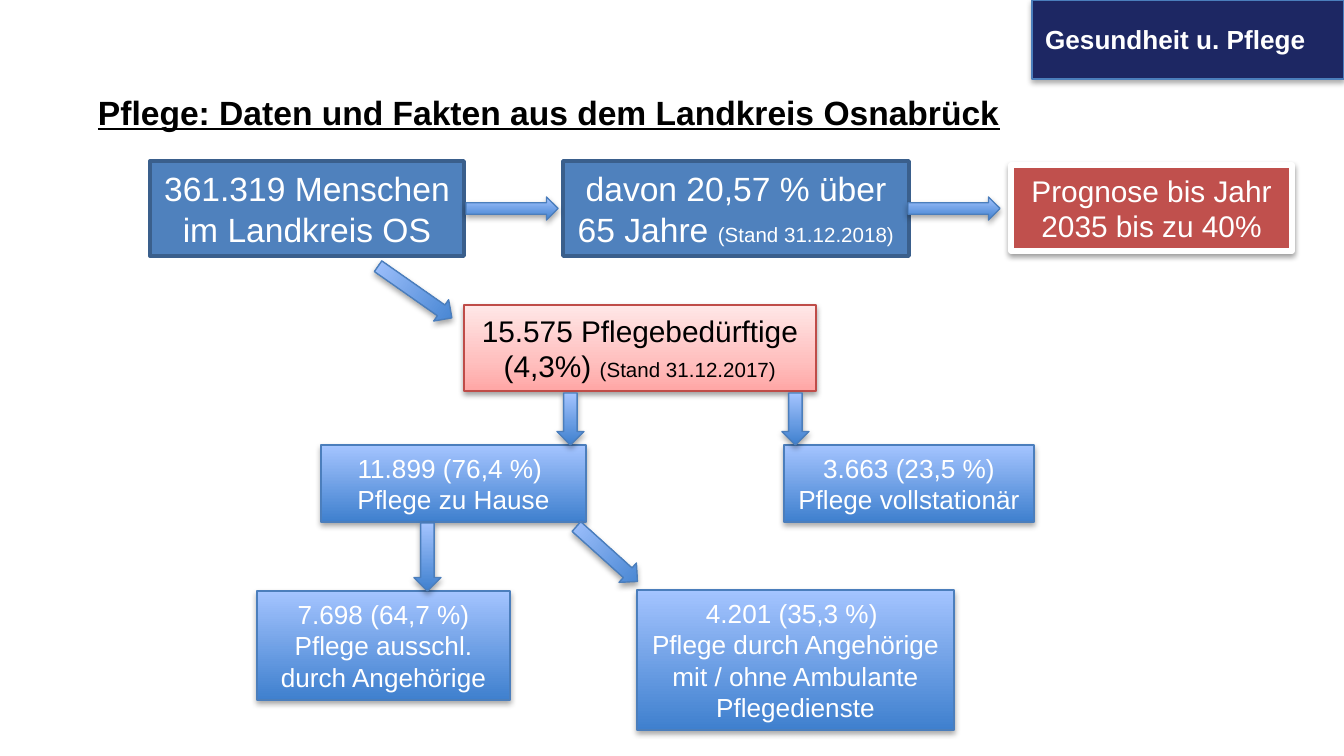
import copy
from dataclasses import dataclass

import lxml.etree
import pptx
import pptx.dml.color
import pptx.enum.shapes
import pptx.enum.text
import pptx.oxml
import pptx.oxml.ns
import pptx.util

SCALE = 914400 / 134.4
KIND = pptx.enum.shapes.MSO_SHAPE
ALIGN = pptx.enum.text.PP_ALIGN


@dataclass(frozen=True)
class Theme:
    font: str = "Arial"
    white: str = "FFFFFF"
    black: str = "000000"
    navy: str = "1D2763"
    steel: str = "4F81BD"
    rim: str = "3A5F8C"
    edge: str = "4B7EBC"
    red: str = "C0504D"
    rose: str = "BF4C48"
    blues: tuple = ((0, "3F80CE"), (100, "A4C4FF"))
    pinks: tuple = ((0, "FFA6A5"), (35, "FFC0BF"), (100, "FFE7E7"))
    large: int = 18
    mid: int = 16
    base: int = 14
    small: int = 11


T = Theme()


def px(num):
    return pptx.util.Emu(round(num * SCALE))


def rgb(code):
    return pptx.dml.color.RGBColor.from_string(code)


def shade(shape, alpha):
    """Cast a soft shadow straight down, with alpha in percent."""
    shape.shadow.inherit = False
    effects = shape._element.spPr.find(pptx.oxml.ns.qn("a:effectLst"))
    effects.append(pptx.oxml.parse_xml(
        f'<a:outerShdw {pptx.oxml.ns.nsdecls("a")} blurRad="40000" '
        'dist="23000" dir="5400000" rotWithShape="0"><a:srgbClr val="000000">'
        f'<a:alpha val="{alpha * 1000}"/></a:srgbClr></a:outerShdw>'))


def paint(fill, colour):
    """Fill with one colour, or with (percent, colour) stops from the bottom up."""
    if isinstance(colour, str):
        fill.solid()
        fill.fore_color.rgb = rgb(colour)
        return
    fill.gradient()
    fill.gradient_angle = 90
    first = fill.gradient_stops[0]._gs
    for _ in colour[2:]:
        first.addnext(copy.deepcopy(first))
    for stop, (place, code) in zip(fill.gradient_stops, colour):
        stop.position = place / 100
        stop.color.rgb = rgb(code)


def draw(slide, kind, spot, fill, edge, width=0.75, alpha=35):
    shape = slide.shapes.add_shape(kind, *map(px, spot))
    paint(shape.fill, fill)
    shape.line.color.rgb = rgb(edge)
    shape.line.width = pptx.util.Pt(width)
    if alpha:
        shade(shape, alpha)
    else:
        shape.shadow.inherit = False
    return shape


def write(shape, lines, size, colour, align=ALIGN.CENTER, bold=False, under=False):
    """Write paragraphs of runs; a run is a text, a (text, size) or a line break."""
    frame = shape.text_frame
    frame.word_wrap = True
    frame.margin_left = frame.margin_right = px(13 if align == ALIGN.LEFT else 10)
    for i, line in enumerate(lines):
        para = frame.add_paragraph() if i else frame.paragraphs[0]
        para.alignment = align
        for part in line:
            if part == "\n":
                para.add_line_break()
                continue
            text, points = (part, size) if isinstance(part, str) else part
            run = para.add_run()
            run.text = text
            run.font.name = T.font
            run.font.size = pptx.util.Pt(points)
            run.font.color.rgb = rgb(colour)
            run.font.bold = bold
            run.font.underline = under


def label(slide, spot, text, size, colour, under=False):
    box = slide.shapes.add_textbox(*map(px, spot))
    write(box, [[text]], size, colour, ALIGN.LEFT, True, under)


def card(slide, spot, lines, fill=T.blues, edge=T.edge, size=T.base,
         colour=T.white, width=0.75, alpha=35):
    shape = draw(slide, KIND.RECTANGLE, spot, fill, edge, width, alpha)
    shape.text_frame.vertical_anchor = pptx.enum.text.MSO_ANCHOR.MIDDLE
    write(shape, lines, size, colour)


def arrow(slide, kind, spot, turn=0):
    draw(slide, kind, spot, T.blues, T.edge).rotation = turn


def main():
    deck = pptx.Presentation()
    deck.slide_width, deck.slide_height = px(1344), px(756)
    slide = deck.slides.add_slide(deck.slide_layouts[6])

    draw(slide, KIND.RECTANGLE, (1032, 0, 312, 79), T.navy, T.edge)
    label(slide, (1032, 17, 297, 46), "Gesundheit u. Pflege", T.base, T.white)
    label(slide, (85, 85, 949, 54),
          "Pflege: Daten und Fakten aus dem Landkreis Osnabrück",
          T.large, T.black, True)

    steel = dict(fill=T.steel, edge=T.rim, size=T.large, width=2, alpha=0)
    card(slide, (150, 161, 314, 95), [["361.319 Menschen im Landkreis OS"]], **steel)
    card(slide, (563, 161, 346, 95),
         [["davon 20,57 % über 65 Jahre ", ("(Stand 31.12.2018)", T.small)]], **steel)

    card(slide, (321, 445, 265, 77), [["11.899 (76,4 %) "], ["Pflege zu Hause"]])
    card(slide, (784, 445, 250, 77), [["3.663 (23,5 %)"], ["Pflege vollstationär"]])
    card(slide, (257, 591, 253, 109),
         [["7.698 (64,7 %) Pflege ausschl. durch Angehörige"]])
    card(slide, (637, 590, 317, 140),
         [["4.201 (35,3 %) ", "\n",
           "Pflege durch Angehörige mit / ohne Ambulante Pflegedienste"]])
    card(slide, (464, 305, 352, 86),
         [["15.575 Pflegebedürftige (4,3%) ", ("(Stand 31.12.2017)", T.small)]],
         T.pinks, T.rose, T.mid, T.black, alpha=38)

    for spot, turn in (((402, 247, 26, 90), 305), ((557, 393, 27, 52), 0),
                       ((782, 393, 27, 52), 0), ((414, 523, 27, 68), 0),
                       ((594, 513, 26, 82), 312)):
        arrow(slide, KIND.DOWN_ARROW, spot, turn)

    card(slide, (1011, 165, 281, 86), [["Prognose bis Jahr 2035 bis zu 40%"]],
         T.red, T.white, T.mid, width=3, alpha=38)
    for left in (466, 908):
        arrow(slide, KIND.RIGHT_ARROW, (left, 197, 92, 23))

    deck.save("out.pptx")


if __name__ == "__main__":
    main()
